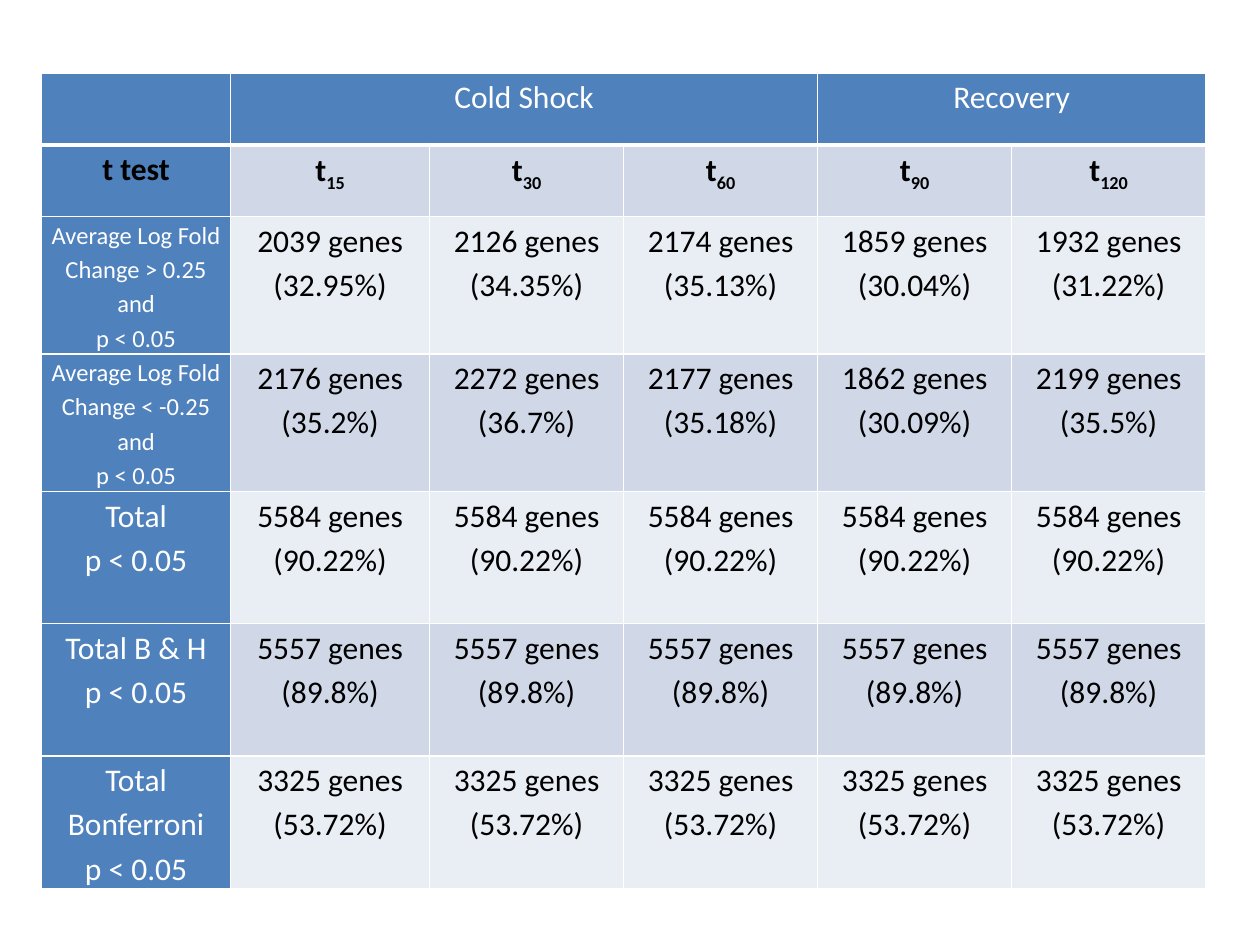
from dataclasses import dataclass

from lxml import etree
from pptx import Presentation
from pptx import util as u
from pptx.dml.color import RGBColor
from pptx.enum import text
from pptx.oxml.ns import qn


@dataclass(frozen=True)
class Theme:
    font: str = "Calibri"
    body_size: int = 18
    small_size: int = 14
    line_spacing: float = 1.15
    header: str = "4F81BD"
    bands: tuple = ("D0D8E8", "E9EDF4")
    light: str = "FFFFFF"
    dark: str = "000000"


THEME = Theme()

COLUMN_WIDTHS = [1.5, 1.58, 1.54, 1.54, 1.54, 1.54]
ROW_HEIGHTS = [0.57, 0.57, 1.09, 1.09, 1.05, 1.05, 1.05]
TIMES = ["15", "30", "60", "90", "120"]

# Criterion lines, label size, gene counts with percentages
RESULTS = [
    (["Average Log Fold Change > 0.25 and", "p < 0.05"], THEME.small_size,
     ["2039 genes (32.95%)", "2126 genes (34.35%)", "2174 genes (35.13%)",
      "1859 genes (30.04%)", "1932 genes (31.22%)"]),
    (["Average Log Fold Change < -0.25 and", "p < 0.05"], THEME.small_size,
     ["2176 genes (35.2%)", "2272 genes (36.7%)", "2177 genes (35.18%)",
      "1862 genes (30.09%)", "2199 genes (35.5%)"]),
    (["Total", "p < 0.05"], THEME.body_size, ["5584 genes (90.22%)"] * len(TIMES)),
    (["Total B & H", "p < 0.05"], THEME.body_size, ["5557 genes (89.8%)"] * len(TIMES)),
    (["Total Bonferroni", "p < 0.05"], THEME.body_size,
     ["3325 genes (53.72%)"] * len(TIMES)),
]


def add_span(para, words, size=THEME.body_size, color=THEME.dark, bold=False, baseline=0):
    span = para.add_run()
    span.text = words
    span.font.name = THEME.font
    span.font.size = u.Pt(size)
    span.font.bold = bold
    span.font.color.rgb = RGBColor.from_string(color)
    if baseline:
        span.font._element.set("baseline", str(baseline * 1000))


def write_cell(cell, lines, subscript="", **style):
    """Write centred paragraphs, with an optional subscript after the last."""
    frame = cell.text_frame
    for index, line in enumerate(lines):
        para = frame.add_paragraph() if index else frame.paragraphs[0]
        para.alignment = text.PP_ALIGN.CENTER
        para.line_spacing = THEME.line_spacing
        add_span(para, line, **style)
    if subscript:
        add_span(para, subscript, baseline=-25, **style)


def style_cell(cell, fill, bottom=1):
    cell.margin_left = cell.margin_right = u.Inches(0.07)
    cell.margin_top = cell.margin_bottom = 0
    cell.fill.solid()
    cell.fill.fore_color.rgb = RGBColor.from_string(fill)
    # Borders come before the fill in the cell properties
    properties = cell._tc.get_or_add_tcPr()
    widths = {"lnL": 1, "lnR": 1, "lnT": 1, "lnB": bottom}
    for position, (side, width) in enumerate(widths.items()):
        line = etree.Element(qn(f"a:{side}"), w=str(u.Pt(width)))
        solid = etree.SubElement(line, qn("a:solidFill"))
        etree.SubElement(solid, qn("a:srgbClr"), val=THEME.light)
        properties.insert(position, line)


def add_grid(page):
    box = page.shapes.add_table(
        len(ROW_HEIGHTS), len(COLUMN_WIDTHS), u.Inches(0.33), u.Inches(0.58),
        u.Inches(sum(COLUMN_WIDTHS)), u.Inches(sum(ROW_HEIGHTS)))
    table = box.table
    for column, width in zip(table.columns, COLUMN_WIDTHS):
        column.width = u.Inches(width)
    for row, height in zip(table.rows, ROW_HEIGHTS):
        row.height = u.Inches(height)
    for r, row in enumerate(table.rows):
        for c, cell in enumerate(row.cells):
            is_header = r == 0 or c == 0
            fill = THEME.header if is_header else THEME.bands[(r - 1) % 2]
            style_cell(cell, fill, bottom=1 if r else 3)
    return table


def fill_headings(table):
    for title, first, last in [("Cold Shock", 1, 3), ("Recovery", 4, 5)]:
        table.cell(0, first).merge(table.cell(0, last))
        write_cell(table.cell(0, first), [title], color=THEME.light)
    write_cell(table.cell(1, 0), ["t test"], bold=True)
    for c, time in enumerate(TIMES, start=1):
        write_cell(table.cell(1, c), ["t"], subscript=time, bold=True)


def fill_results(table):
    for r, (criterion, size, counts) in enumerate(RESULTS, start=2):
        write_cell(table.cell(r, 0), criterion, size=size, color=THEME.light)
        for c, count in enumerate(counts, start=1):
            write_cell(table.cell(r, c), [count])


def main():
    deck = Presentation()
    deck.slide_width, deck.slide_height = u.Inches(10), u.Inches(7.5)
    page = deck.slides.add_slide(deck.slide_layouts[6])

    # Gene counts by time point and significance test
    table = add_grid(page)
    fill_headings(table)
    fill_results(table)

    deck.save("out.pptx")


if __name__ == "__main__":
    main()
